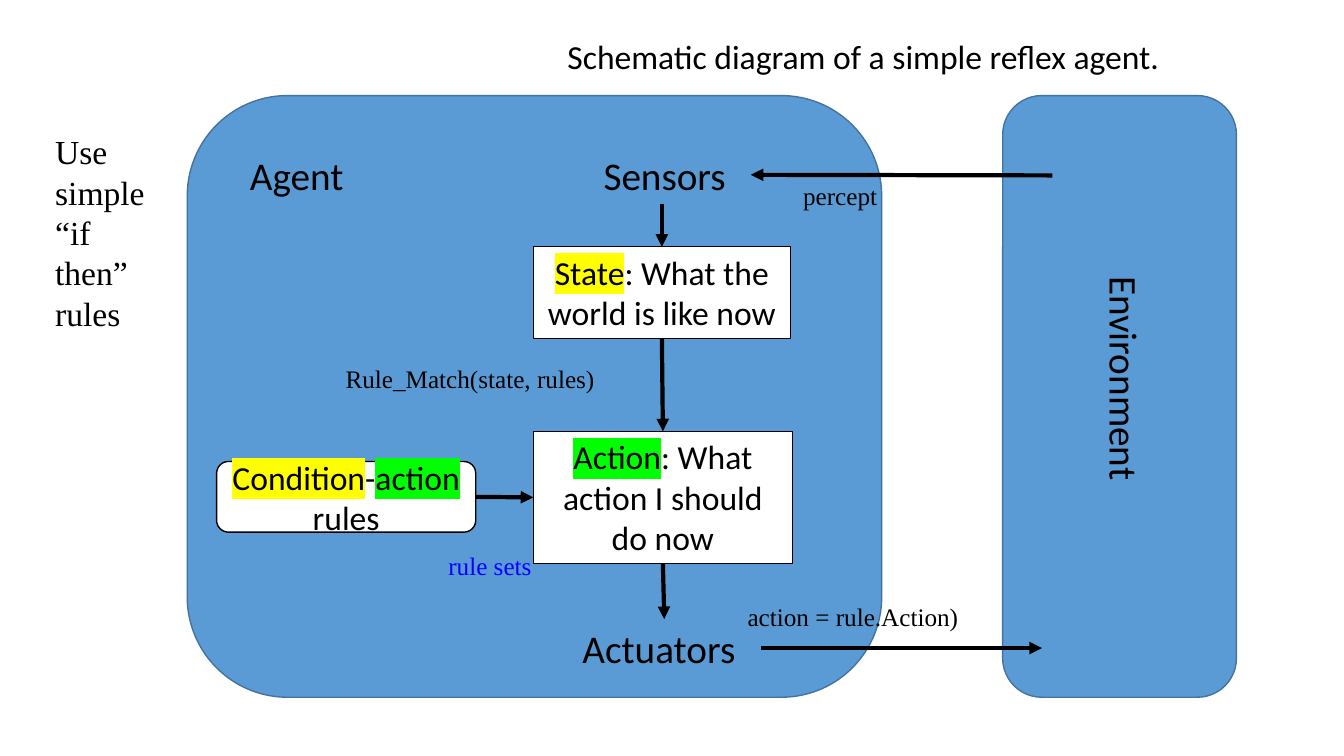
"""Build the schematic slide of a simple reflex agent."""
from dataclasses import dataclass

from lxml import etree
from pptx import Presentation, util as u
from pptx.dml import color
from pptx.enum import shapes, text
from pptx.oxml import ns


@dataclass(frozen=True)
class Theme:
    panel: str = "5B9BD5"
    panel_edge: str = "43739E"
    paper: str = "FFFFFF"
    ink: str = "000000"
    accent: str = "0000FF"
    condition: str = "FFFF00"
    action: str = "00FF00"
    sans: str = "Calibri"
    serif: str = "Times New Roman"
    heading: int = 28
    body: int = 24
    label: int = 18


theme = Theme()
rgb = color.RGBColor.from_string


def write(shape, runs, size, font_name=theme.sans, ink=theme.ink, **frame_format):
    frame = shape.text_frame
    values = {"word_wrap": True, "vertical_anchor": text.MSO_ANCHOR.TOP,
              "auto_size": text.MSO_AUTO_SIZE.SHAPE_TO_FIT_TEXT} | frame_format
    for name, value in values.items():
        setattr(frame, name, value)
    for words, highlight in runs:
        run = frame.paragraphs[0].add_run()
        run.text = words
        for name, value in {"size": u.Pt(size), "name": font_name}.items():
            setattr(run.font, name, value)
        run.font.color.rgb = rgb(ink)
        if highlight:
            mark = etree.Element(ns.qn("a:highlight"))
            etree.SubElement(mark, ns.qn("a:srgbClr"), val=highlight)
            run.font.fill._xPr.find(ns.qn("a:solidFill")).addnext(mark)


def add_block(geometry, place, fill, edge, edge_width):
    shape = slide.shapes.add_shape(geometry, *map(u.Cm, place))
    shape.shadow.inherit = False
    shape.fill.solid()
    shape.fill.fore_color.rgb = rgb(fill)
    shape.line.color.rgb = rgb(edge)
    shape.line.width = u.Pt(edge_width)
    return shape


presentation = Presentation()
presentation.slide_width, presentation.slide_height = u.Cm(33.87), u.Cm(19.05)
slide = presentation.slides.add_slide(presentation.slide_layouts[6])
rectangle = shapes.MSO_SHAPE.RECTANGLE
rounded = shapes.MSO_SHAPE.ROUNDED_RECTANGLE

for left, width in [(4.72, 17.5), (25.27, 5.89)]:
    add_block(rounded, (left, 2.41, width, 15.16), theme.panel, theme.panel_edge, 1)

state = add_block(rectangle, (13.44, 6.22, 6.48, 2.31), theme.paper, theme.ink, 0.75)
action = add_block(rectangle, (13.44, 10.87, 6.53, 3.33), theme.paper, theme.ink, 0.75)
rules = add_block(rounded, (5.46, 11.63, 6.53, 1.78), theme.paper, theme.ink, 1)
write(state, [("State", theme.condition), (": What the world is like now", None)], theme.body)
write(action, [("Action", theme.action), (": What action I should do now", None)], theme.body)
write(rules, [("Condition", theme.condition), ("-", None), ("action", theme.action),
              (" rules", None)], theme.body,
      vertical_anchor=text.MSO_ANCHOR.MIDDLE, auto_size=text.MSO_AUTO_SIZE.NONE)
for box in (state, action, rules):
    box.text_frame.paragraphs[0].alignment = text.PP_ALIGN.CENTER

captions = {}
for words, place, size, font_name, ink in [
    ("Environment", (27.38, 6.71, 1.7, 5.66), theme.heading, theme.sans, theme.ink),
    ("Sensors", (14.96, 3.68, 3.96, 1.45), theme.heading, theme.sans, theme.ink),
    ("Actuators", (14.43, 15.6, 4.62, 1.45), theme.heading, theme.sans, theme.ink),
    ("Agent", (6.05, 3.68, 3.96, 1.45), theme.heading, theme.sans, theme.ink),
    ("Schematic diagram of a simple reflex agent.", (14.05, 0.79, 16.97, 1.27),
     theme.body, theme.sans, theme.ink),
    ("Use simple “if then” rules", (1.14, 3.18, 3.23, 5.38),
     theme.body, theme.serif, theme.ink),
    ("percept", (19.99, 4.42, 2.74, 1.02), theme.label, theme.serif, theme.ink),
    ("Rule_Match(state, rules)", (8.46, 9.02, 6.91, 1.02),
     theme.label, theme.serif, theme.ink),
    ("rule sets", (11.05, 13.74, 3.38, 1.02), theme.label, theme.serif, theme.accent),
    ("action = rule.Action)", (18.59, 15.04, 6.07, 1.02),
     theme.label, theme.serif, theme.ink),
]:
    captions[words] = slide.shapes.add_textbox(*map(u.Cm, place))
    write(captions[words], [(words, None)], size, font_name, ink)
captions["Environment"].text_frame._txBody.bodyPr.set("vert", "eaVert")

top, left_side, bottom, right_side = range(4)
sensors, actuators = captions["Sensors"], captions["Actuators"]
for start, end, source, target in [
    ((26.52, 4.42), (18.92, 4.42), None, (sensors, right_side)),
    ((19.18, 16.33), (26.26, 16.33), None, None),
    ((16.68, 5.13), (16.68, 6.22), None, (state, top)),
    ((16.68, 8.53), (16.7, 10.87), (state, bottom), (action, top)),
    ((16.7, 14.2), (16.74, 15.6), (action, bottom), (actuators, top)),
    ((11.99, 12.52), (13.44, 12.53), (rules, right_side), (action, left_side)),
]:
    arrow = slide.shapes.add_connector(shapes.MSO_CONNECTOR.STRAIGHT, *map(u.Cm, start + end))
    if source:
        arrow.begin_connect(*source)
    if target:
        arrow.end_connect(*target)
    arrow.line.color.rgb = rgb(theme.ink)
    arrow.line.width = u.Pt(3)
    etree.SubElement(arrow.line._get_or_add_ln(), ns.qn("a:tailEnd"), type="triangle")
    etree.SubElement(arrow._element.spPr, ns.qn("a:effectLst"))

presentation.save("out.pptx")
